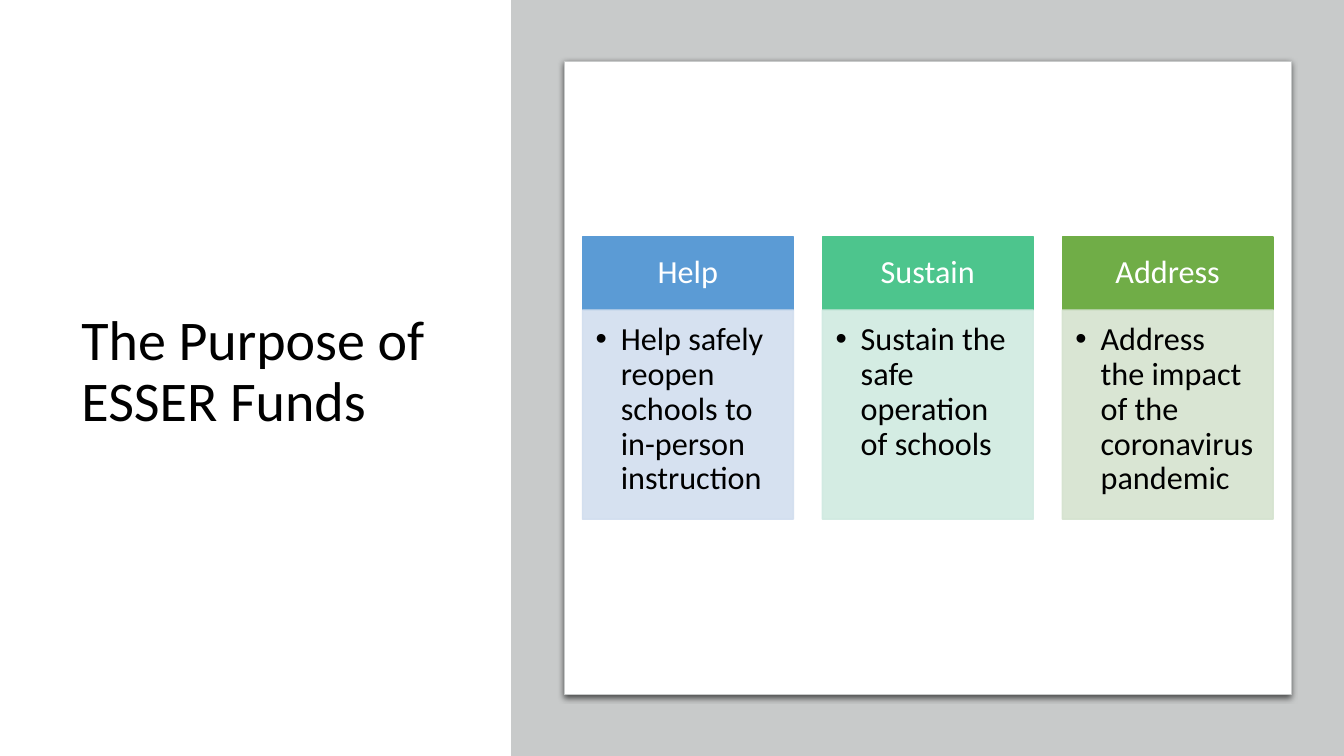
from lxml.etree import SubElement
from pptx import Presentation
from pptx.dml.color import RGBColor
from pptx.enum.shapes import MSO_SHAPE as SHAPE
from pptx.enum.text import MSO_ANCHOR as ANCHOR, MSO_AUTO_SIZE as AUTOSIZE, PP_ALIGN as ALIGN
from pptx.oxml.ns import qn
from pptx.util import Inches, Pt

COLS, ROWS = 160, 90
GRAY, WHITE, BLACK = "C8CACA", "FFFFFF", "000000"


def rgb(hex_color):
    return RGBColor.from_string(hex_color)


class Deck:
    """Style and current slide; positions are in grid columns and rows."""
    font = "Calibri"

    def __init__(self, prs):
        self.cell_w = prs.slide_width / COLS
        self.cell_h = prs.slide_height / ROWS
        self.slide = prs.slides.add_slide(prs.slide_layouts[5])

    def box(self, x, y, w, h):
        return [round(v) for v in (x * self.cell_w, y * self.cell_h,
                                   w * self.cell_w, h * self.cell_h)]

    def add_text(self, tf, text, size, color, align, anchor, after=0):
        tf.word_wrap, tf.auto_size, tf.vertical_anchor = True, AUTOSIZE.NONE, anchor
        p = tf.paragraphs[0]
        p.alignment, p.line_spacing, p.space_after = align, 0.9, Pt(after)
        r = p.add_run()
        r.text = text
        r.font.name, r.font.size, r.font.color.rgb = self.font, Pt(size), rgb(color)
        return p

    def title(self, text, *area):
        sp = self.slide.shapes.title
        sp.left, sp.top, sp.width, sp.height = self.box(*area)
        self.add_text(sp.text_frame, text, 40, BLACK, ALIGN.LEFT, ANCHOR.MIDDLE)

    def block(self, area, fill, line=None, width=1, kind=SHAPE.RECTANGLE, alpha=None):
        sp = self.slide.shapes.add_shape(kind, *self.box(*area))
        sp.shadow.inherit = False
        sp.fill.solid()
        sp.fill.fore_color.rgb = rgb(fill)
        if line:
            sp.line.color.rgb, sp.line.width = rgb(line), Pt(width)
        else:
            sp.line.fill.background()
        if alpha:
            for clr in sp._element.spPr.iter(qn("a:srgbClr")):
                SubElement(clr, qn("a:alpha"), val=str(alpha * 1000))
        return sp

    def card(self, *area):
        sp = self.block(area, WHITE, GRAY, 0.75, SHAPE.ROUNDED_RECTANGLE)
        sp.adjustments[0] = 0
        effects = sp._element.spPr.find(qn("a:effectLst"))
        shadow = SubElement(effects, qn("a:outerShdw"), blurRad=str(Pt(4.5)),
                            dist=str(Pt(1.5)), dir="5400000", rotWithShape="0")
        clr = SubElement(shadow, qn("a:srgbClr"), val=BLACK)
        SubElement(clr, qn("a:alpha"), val="63000")

    def insets(self, tf, *sides):
        tf.margin_left, tf.margin_top, tf.margin_right, tf.margin_bottom = [
            Inches(side) for side in sides]

    def header(self, text, color, *area):
        tf = self.block(area, color, color).text_frame
        self.insets(tf, 0.18, 0.1, 0.18, 0.1)
        self.add_text(tf, text, 23, WHITE, ALIGN.CENTER, ANCHOR.MIDDLE, after=8)

    def bullet(self, text, color, *area):
        tf = self.block(area, color, color, alpha=90).text_frame
        self.insets(tf, 0.13, 0.13, 0.18, 0.2)
        p = self.add_text(tf, text, 23, BLACK, ALIGN.LEFT, ANCHOR.TOP, after=3.5)
        pPr = p._p.get_or_add_pPr()
        pPr.set("marL", str(Inches(0.25)))
        pPr.set("indent", str(-Inches(0.25)))
        SubElement(pPr, qn("a:buFont"), typeface="Arial")
        SubElement(pPr, qn("a:buChar"), char="•")


PURPOSES = [
    ("Help", "Help safely reopen schools to in-person instruction", "5B9BD5", "D2DEEF"),
    ("Sustain", "Sustain the safe operation of schools", "4DC58D", "D0EAE1"),
    ("Address", "Address the impact of the coronavirus pandemic", "70AD47", "D5E3CF"),
]


def main():
    prs = Presentation()
    prs.slide_width, prs.slide_height = Inches(13.33), Inches(7.5)
    deck = Deck(prs)

    # Title on the left
    deck.title("The Purpose of ESSER Funds", 8.5, 8.3, 48.1, 72.2)

    # Gray panel with the white card
    deck.block((60.85, 0, COLS - 60.85, ROWS), GRAY)
    deck.card(67.2, 7.3, 86.5, 75.4)

    # Three purposes: header above bullet
    left, pitch, width = 69.35, 28.56, 25.1
    top, head_h, body_h = 28.2, 8.7, 24.9
    for i, (name, detail, strong, pale) in enumerate(PURPOSES):
        x = left + i * pitch
        deck.header(name, strong, x, top, width, head_h)
        deck.bullet(detail, pale, x, top + head_h, width, body_h)

    prs.save("out.pptx")


if __name__ == "__main__":
    main()
